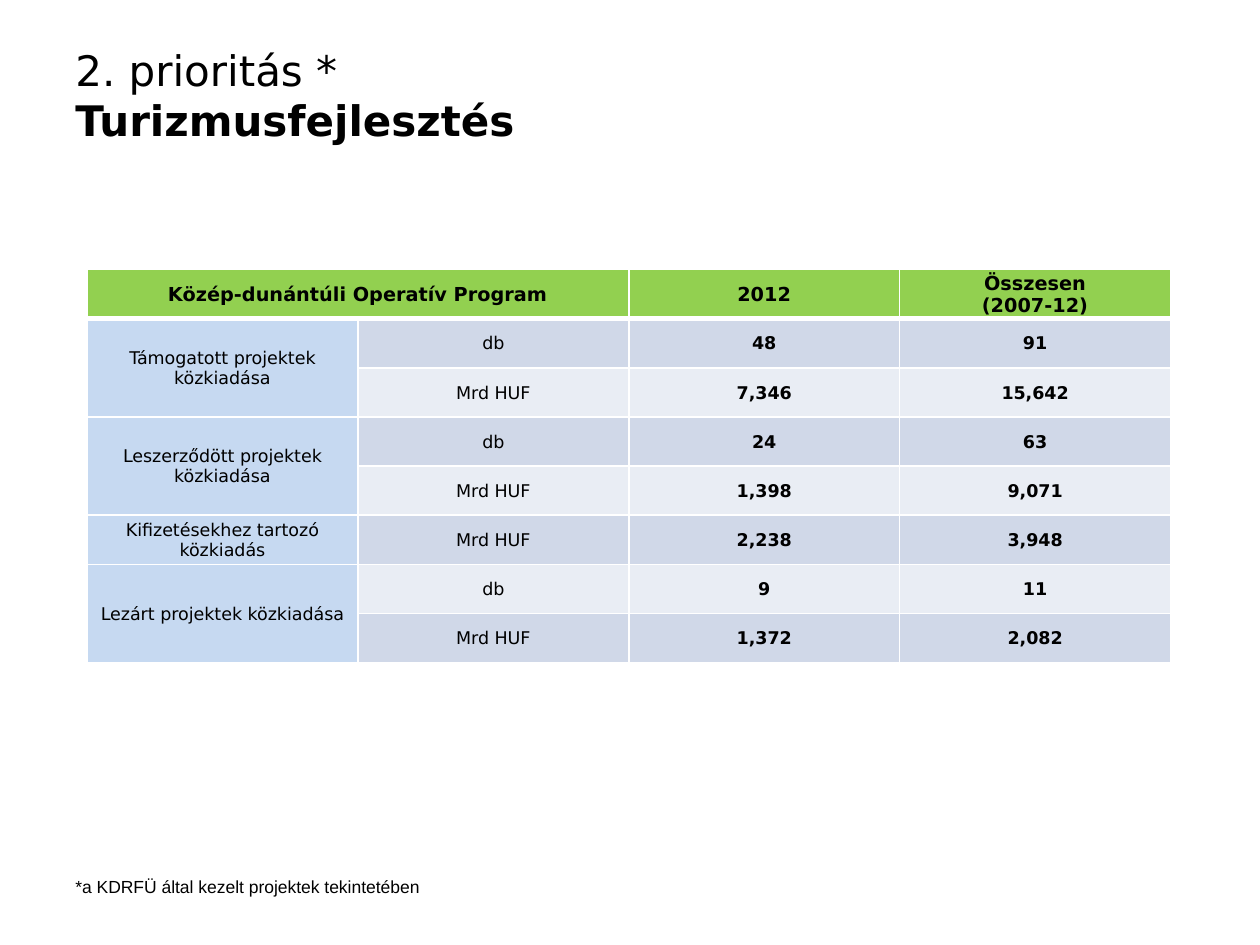
import pptx
import pptx.dml.color
import pptx.enum.text
import pptx.oxml
import pptx.oxml.ns
import pptx.util

WIDTH, HEIGHT = 10, 7.5
TABLE_LEFT, TABLE_TOP = 0.69, 2.14
COLUMN_WIDTH, ROW_HEIGHT = 2.15, 0.39
TABLE_FONT = "DejaVu Sans"
HEADER_FILL, LABEL_FILL = "92D050", "C6D9F1"
BAND_FILLS = ("E9EDF4", "D0D8E8")

ROWS = [
    ("Közép-dunántúli Operatív Program", "", "2012", "Összesen\n(2007-12)"),
    ("Támogatott projektek közkiadása", "db", "48", "91"),
    ("", "Mrd HUF", "7,346", "15,642"),
    ("Leszerződött projektek közkiadása", "db", "24", "63"),
    ("", "Mrd HUF", "1,398", "9,071"),
    ("Kifizetésekhez tartozó közkiadás", "Mrd HUF", "2,238", "3,948"),
    ("Lezárt projektek közkiadása", "db", "9", "11"),
    ("", "Mrd HUF", "1,372", "2,082"),
]
# First and last (row, column) of each merged area
MERGES = [((0, 0), (0, 1)), ((1, 0), (2, 0)), ((3, 0), (4, 0)), ((6, 0), (7, 0))]


def color(hex_string):
    return pptx.dml.color.RGBColor.from_string(hex_string)


def add_run(paragraph, text, font, size, bold=False):
    run = paragraph.add_run()
    run.text = text
    run.font.name = font
    run.font.size = pptx.util.Pt(size)
    run.font.bold = bold
    run.font.color.rgb = color("000000")


def add_text_box(slide, left, top, width, height, lines, font, size):
    """Lines are (text, bold) pairs of one paragraph."""
    box = slide.shapes.add_textbox(*map(pptx.util.Inches, (left, top, width, height)))
    box.text_frame.word_wrap = True
    paragraph = box.text_frame.paragraphs[0]
    for index, (text, bold) in enumerate(lines):
        if index:
            paragraph.add_line_break()
        add_run(paragraph, text, font, size, bold)


def add_borders(cell, bottom_width):
    properties = cell._tc.get_or_add_tcPr()
    for side, width in (("L", 1), ("R", 1), ("T", 1), ("B", bottom_width)):
        properties.append(pptx.oxml.parse_xml(
            f'<a:ln{side} {pptx.oxml.ns.nsdecls("a")} w="{pptx.util.Pt(width)}">'
            f'<a:solidFill><a:srgbClr val="FFFFFF"/></a:solidFill></a:ln{side}>'))


def fill_for(row, column):
    if row == 0:
        return HEADER_FILL
    return LABEL_FILL if column == 0 else BAND_FILLS[row % 2]


def fill_cell(cell, text, row, column):
    is_header = row == 0
    add_borders(cell, 3 if is_header else 1)
    cell.fill.solid()
    cell.fill.fore_color.rgb = color(fill_for(row, column))
    cell.margin_left = cell.margin_right = cell.margin_top = pptx.util.Inches(0.01)
    cell.margin_bottom = 0
    cell.vertical_anchor = pptx.enum.text.MSO_ANCHOR.MIDDLE
    if not text:
        return
    frame = cell.text_frame
    for index, line in enumerate(text.split("\n")):
        paragraph = frame.add_paragraph() if index else frame.paragraphs[0]
        paragraph.alignment = pptx.enum.text.PP_ALIGN.CENTER
        add_run(paragraph, line, TABLE_FONT, 11 if is_header else 10,
                is_header or column >= 2)


def add_program_table(slide):
    row_count, column_count = len(ROWS), len(ROWS[0])
    table = slide.shapes.add_table(
        row_count, column_count,
        pptx.util.Inches(TABLE_LEFT), pptx.util.Inches(TABLE_TOP),
        pptx.util.Inches(COLUMN_WIDTH * column_count),
        pptx.util.Inches(ROW_HEIGHT * row_count)).table
    for row, texts in enumerate(ROWS):
        for column, text in enumerate(texts):
            fill_cell(table.cell(row, column), text, row, column)
    for first, last in MERGES:
        table.cell(*first).merge(table.cell(*last))


def main():
    presentation = pptx.Presentation()
    presentation.slide_width = pptx.util.Inches(WIDTH)
    presentation.slide_height = pptx.util.Inches(HEIGHT)
    slide = presentation.slides.add_slide(presentation.slide_layouts[6])
    add_text_box(slide, WIDTH * 0.05, HEIGHT * 0.04, WIDTH * 0.9, 1.25,
                 [("2. prioritás *", False), ("Turizmusfejlesztés", True)],
                 "DejaVu Sans", 24)
    add_text_box(slide, WIDTH * 0.05, HEIGHT * 0.92, 3.94, 0.27,
                 [("*a KDRFÜ által kezelt projektek tekintetében", False)],
                 "Arial", 10)
    add_program_table(slide)
    presentation.save("out.pptx")


if __name__ == "__main__":
    main()
